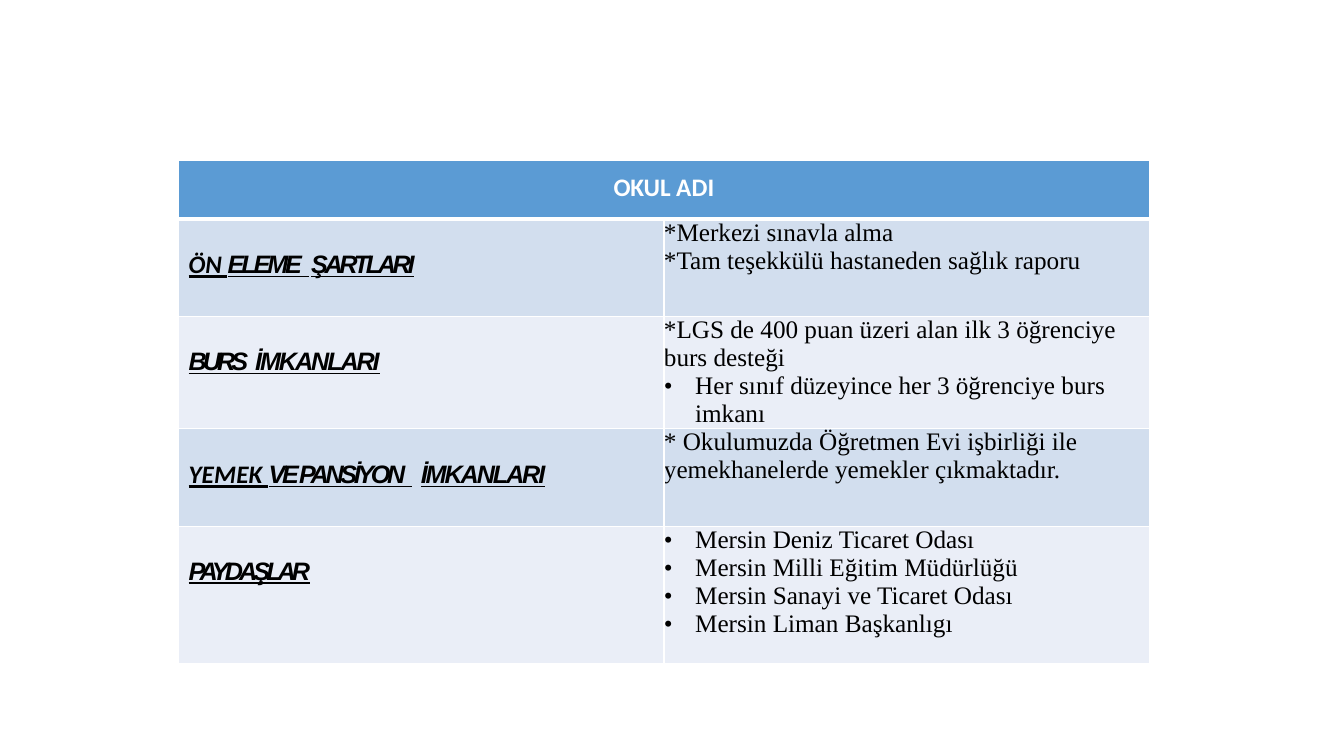
from dataclasses import dataclass

from lxml import etree
from pptx import Presentation
from pptx.dml.color import RGBColor
from pptx.enum import text
from pptx.oxml.ns import qn
from pptx.util import Inches, Pt


@dataclass(frozen=True)
class Theme:
    header: str = "5B9BD4"
    bands: tuple = ("D2DEEE", "EAEEF7")
    border: str = "FFFFFF"
    light: str = "FFFFFF"
    dark: str = "000000"
    size: int = 18
    heading_font: str = "Calibri"
    label_font: str = "Arial"
    body_font: str = "Times New Roman"


THEME = Theme()

HEADER = [("OKUL ", THEME.heading_font, -0.1), ("ADI", THEME.heading_font, 0.1)]
ROWS = [
    {
        "height": 0.97,
        "label": [
            ("ÖN ", THEME.heading_font, 0),
            ("ELEME", THEME.label_font, -2.2),
            (" ", THEME.label_font, 1.5),
            ("ŞARTLARI", THEME.label_font, -2.4),
        ],
        "lines": ["*Merkezi sınavla alma", "*Tam teşekkülü hastaneden sağlık raporu"],
        "bullets": [],
    },
    {
        "height": 1.11,
        "label": [
            ("BURS", THEME.label_font, -2.8),
            (" ", THEME.label_font, -0.7),
            ("İMKANLARI", THEME.label_font, -1.5),
        ],
        "lines": ["*LGS de 400 puan üzeri alan ilk 3 öğrenciye burs desteği"],
        "bullets": ["Her sınıf düzeyince her 3 öğrenciye burs imkanı"],
    },
    {
        "height": 0.97,
        "label": [
            ("YEMEK ", THEME.heading_font, 0.1),
            ("VE PANSİYON", THEME.label_font, -2.4),
            (" ", THEME.label_font, 6),
            ("İMKANLARI", THEME.label_font, -1.5),
        ],
        "lines": ["* Okulumuzda Öğretmen Evi işbirliği ile yemekhanelerde yemekler çıkmaktadır."],
        "bullets": [],
    },
    {
        "height": 1.36,
        "label": [("PAYDAŞLAR", THEME.label_font, -2.8)],
        "lines": [],
        "bullets": [
            "Mersin Deniz Ticaret Odası",
            "Mersin Milli Eğitim Müdürlüğü",
            "Mersin Sanayi ve Ticaret Odası",
            "Mersin Liman Başkanlıgı",
        ],
    },
]

LEFT, TOP, COLUMN_WIDTH = 1.77, 1.59, 4.815
HEADER_HEIGHT, HEADER_INSET = 0.58, 0.12
LABEL_LEFT, LABEL_TOP = 0.1, 0.31
BULLET_INDENT = 0.31


def style_cell(cell, color, left=0, top=0, top_line=1, bottom_line=1):
    cell.fill.solid()
    cell.fill.fore_color.rgb = RGBColor.from_string(color)
    cell.margin_left, cell.margin_top = Inches(left), Inches(top)
    cell.margin_right = cell.margin_bottom = 0
    properties = cell._tc.get_or_add_tcPr()
    sides = [("lnL", 1), ("lnR", 1), ("lnT", top_line), ("lnB", bottom_line)]
    for index, (side, width) in enumerate(sides):
        line = etree.Element(qn(f"a:{side}"), w=str(Pt(width)))
        fill = etree.SubElement(line, qn("a:solidFill"))
        etree.SubElement(fill, qn("a:srgbClr"), val=THEME.border)
        properties.insert(index, line)


def set_font(font, color, **emphasis):
    font.size = Pt(THEME.size)
    font.color.rgb = RGBColor.from_string(color)
    for name, value in emphasis.items():
        setattr(font, name, value)


def write_spaced_runs(paragraph, runs, color, **emphasis):
    set_font(paragraph.font, color, **emphasis)
    for words, font_name, spacing in runs:
        run = paragraph.add_run()
        run.text = words
        set_font(run.font, color, name=font_name, **emphasis)
        run.font._element.set("spc", str(round(spacing * 100)))


def add_bullet(paragraph):
    properties = paragraph._p.get_or_add_pPr()
    indent = Inches(BULLET_INDENT)
    properties.set("marL", str(indent))
    properties.set("indent", str(-indent))
    etree.SubElement(properties, qn("a:buFont"), typeface=THEME.body_font)
    etree.SubElement(properties, qn("a:buChar"), char="•")


def write_details(frame, lines, bullets):
    for index, words in enumerate(lines + bullets):
        paragraph = frame.add_paragraph() if index else frame.paragraphs[0]
        paragraph.text = words
        if index >= len(lines):
            add_bullet(paragraph)
        set_font(paragraph.font, THEME.dark, name=THEME.body_font, bold=False)


def main():
    presentation = Presentation()
    presentation.slide_width, presentation.slide_height = Inches(13.33), Inches(7.5)
    slide = presentation.slides.add_slide(presentation.slide_layouts[6])

    heights = [HEADER_HEIGHT] + [row["height"] for row in ROWS]
    table = slide.shapes.add_table(
        len(heights), 2, Inches(LEFT), Inches(TOP),
        Inches(2 * COLUMN_WIDTH), Inches(sum(heights)),
    ).table
    for table_row, height in zip(table.rows, heights):
        table_row.height = Inches(height)

    for cell in table.rows[0].cells:
        style_cell(cell, THEME.header, top=HEADER_INSET, bottom_line=3)
    table.cell(0, 0).merge(table.cell(0, 1))
    title = table.cell(0, 0).text_frame.paragraphs[0]
    title.alignment = text.PP_ALIGN.CENTER
    write_spaced_runs(title, HEADER, THEME.light, bold=True)

    for index, row in enumerate(ROWS):
        label, details = table.rows[index + 1].cells
        color = THEME.bands[index % 2]
        top_line = 1 if index else 3
        style_cell(label, color, LABEL_LEFT, LABEL_TOP, top_line)
        style_cell(details, color, top_line=top_line)
        write_spaced_runs(
            label.text_frame.paragraphs[0], row["label"], THEME.dark,
            bold=True, italic=True, underline=True,
        )
        write_details(details.text_frame, row["lines"], row["bullets"])

    presentation.save("out.pptx")


if __name__ == "__main__":
    main()
